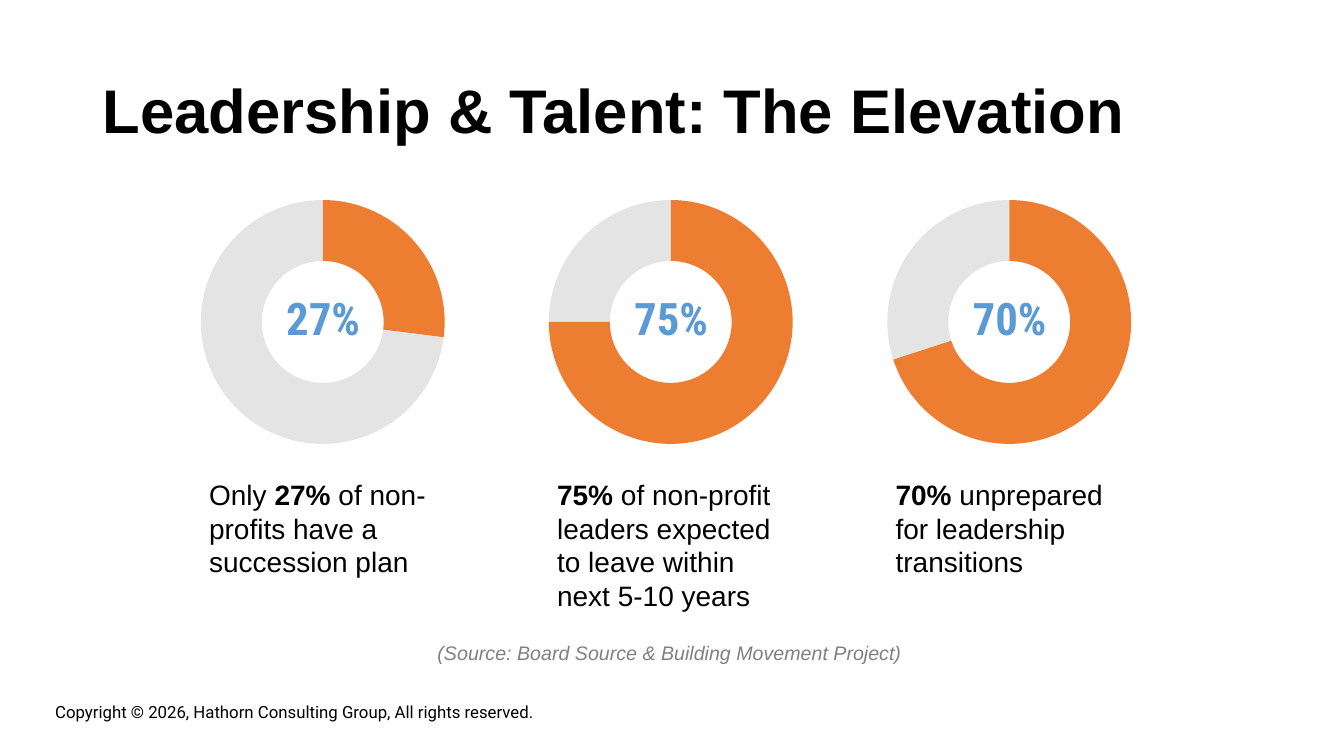
import pptx
import pptx.chart.data
import pptx.dml.color
import pptx.enum.chart
import pptx.enum.text
import pptx.oxml
import pptx.oxml.ns
import pptx.util
from lxml import etree

Cm = pptx.util.Cm
RGBColor = pptx.dml.color.RGBColor
PP_ALIGN = pptx.enum.text.PP_ALIGN

BLACK = RGBColor(0x00, 0x00, 0x00)
GREY = RGBColor(0x80, 0x80, 0x80)
RING_GREY = RGBColor(0xA6, 0xA6, 0xA6)
ORANGE = RGBColor(0xED, 0x7D, 0x31)
BLUE = RGBColor(0x5B, 0x9B, 0xD5)

RING_LAYOUT = (
    '<c:layout %s><c:manualLayout><c:layoutTarget val="inner"/>'
    '<c:xMode val="edge"/><c:yMode val="edge"/><c:x val="0.05"/><c:y val="0.06"/>'
    '<c:w val="0.9"/><c:h val="0.88"/></c:manualLayout></c:layout>'
    % pptx.oxml.ns.nsdecls("c")
)

prs = pptx.Presentation()
prs.slide_width, prs.slide_height = Cm(33.87), Cm(19.05)
s = prs.slides.add_slide(prs.slide_layouts[6])


def add_text(x, y, w, h, pieces, font, size, color, align=PP_ALIGN.LEFT):
    """Add a one-paragraph text box from (text, bold) pieces; return its text frame."""
    tf = s.shapes.add_textbox(Cm(x), Cm(y), Cm(w), Cm(h)).text_frame
    tf.word_wrap = True
    p = tf.paragraphs[0]
    p.alignment = align
    for text, bold in pieces:
        r = p.add_run()
        r.text = text
        r.font.name, r.font.size, r.font.bold = font, pptx.util.Pt(size), bold
        r.font.color.rgb = color
    return tf


add_text(1.14, 17.55, 19.79, 0.76,
         [("Copyright © 2026, Hathorn Consulting Group, All rights reserved.", False)],
         "Roboto", 12, BLACK)

tf = add_text(2.34, 1.02, 29.21, 3.68, [("Leadership & Talent: The Elevation", True)],
              "Arial", 44, BLACK)
tf.vertical_anchor = pptx.enum.text.MSO_ANCHOR.MIDDLE
tf.paragraphs[0].line_spacing = 0.9

tf = add_text(2.34, 16.08, 29.21, 1.07,
              [("(Source: Board Source & Building Movement Project) ", False)],
              "Arial", 14, GREY, PP_ALIGN.CENTER)
tf.paragraphs[0].line_spacing = 0.9
tf.paragraphs[0].runs[0].font.italic = True

# Left edge, share in percent, caption before and after the bold share, caption height
findings = [
    (4.72, 27, "Only ", " of non-profits have a succession plan", 2.82),
    (13.49, 75, "", " of non-profit leaders expected to leave within next 5-10 years", 3.68),
    (22.02, 70, "", " unprepared for leadership transitions", 2.82),
]

for x, share, before, after, caption_h in findings:
    data = pptx.chart.data.CategoryChartData()
    data.categories = ["1", "2"]
    data.add_series("Series 1", (share, 100 - share))
    chart = s.shapes.add_chart(pptx.enum.chart.XL_CHART_TYPE.DOUGHNUT,
                               Cm(x), Cm(4.62), Cm(6.83), Cm(6.99), data).chart
    chart.has_legend = False
    chart.has_title = False
    chart.font.name, chart.font.size = "Calibri", pptx.util.Pt(18)
    chart.font.color.rgb = BLACK
    plot = chart.plots[0]
    plot.vary_by_categories = True
    plot.has_data_labels = False
    for i, color in enumerate((ORANGE, RING_GREY)):
        fmt = plot.series[0].points[i].format
        fmt.fill.solid()
        fmt.fill.fore_color.rgb = color
        fmt.line.fill.background()

    # The remainder is 30 % opaque, and the ring has a fixed place and hole
    space = chart.element if hasattr(chart, "element") else chart._chartSpace
    rest = space.xpath('.//c:dPt[c:idx/@val="1"]/c:spPr/a:solidFill/a:srgbClr')[0]
    etree.SubElement(rest, pptx.oxml.ns.qn("a:alpha")).set("val", "30000")
    space.xpath(".//c:holeSize")[0].set("val", "51")
    area = space.xpath(".//c:plotArea")[0]
    for old in area.xpath("c:layout"):
        area.remove(old)
    area.insert(0, pptx.oxml.parse_xml(RING_LAYOUT))

    add_text(x + 2.03, 7.21, 2.79, 1.63, [(f"{share}%", True)],
             "Roboto Condensed", 32, BLUE, PP_ALIGN.CENTER)
    pieces = [(before, False), (f"{share}%", True), (after, False)]
    add_text(x + 0.3, 11.91, 6.25, caption_h, [piece for piece in pieces if piece[0]],
             "Arial", 20, BLACK)

prs.save("out.pptx")
